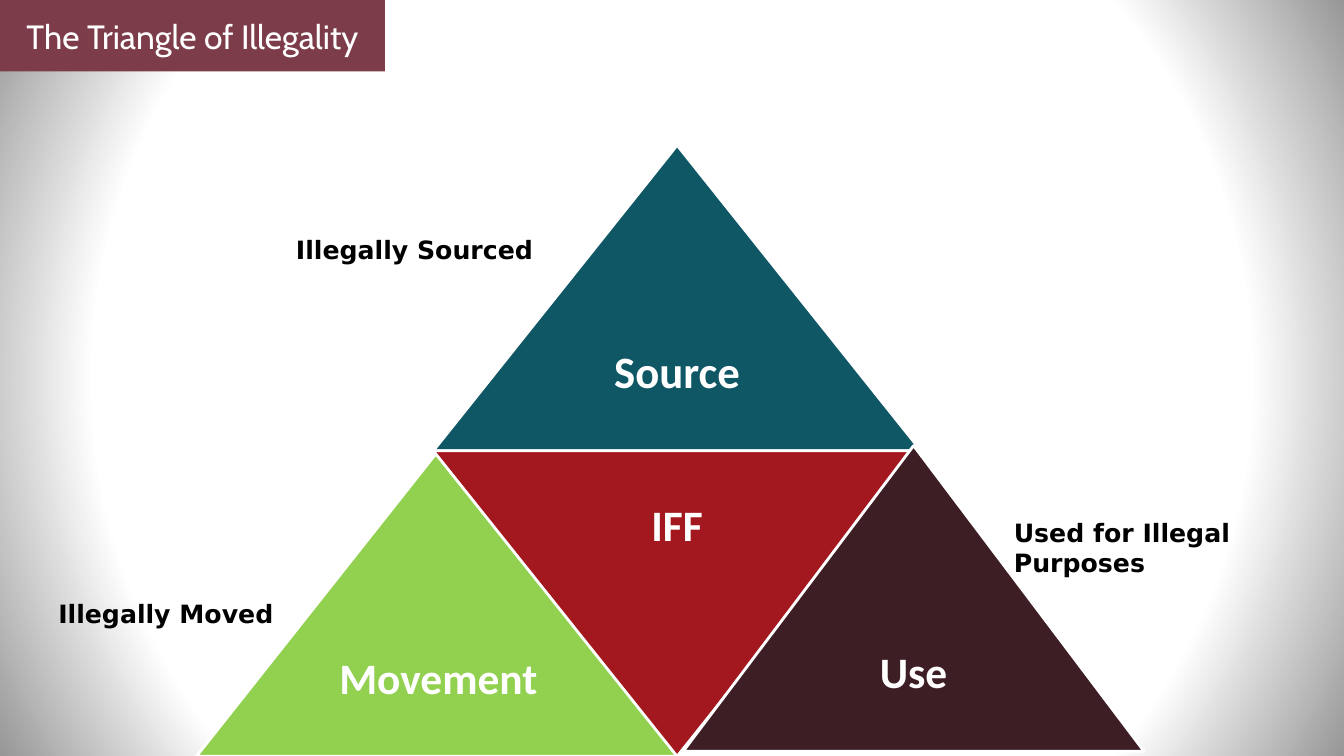
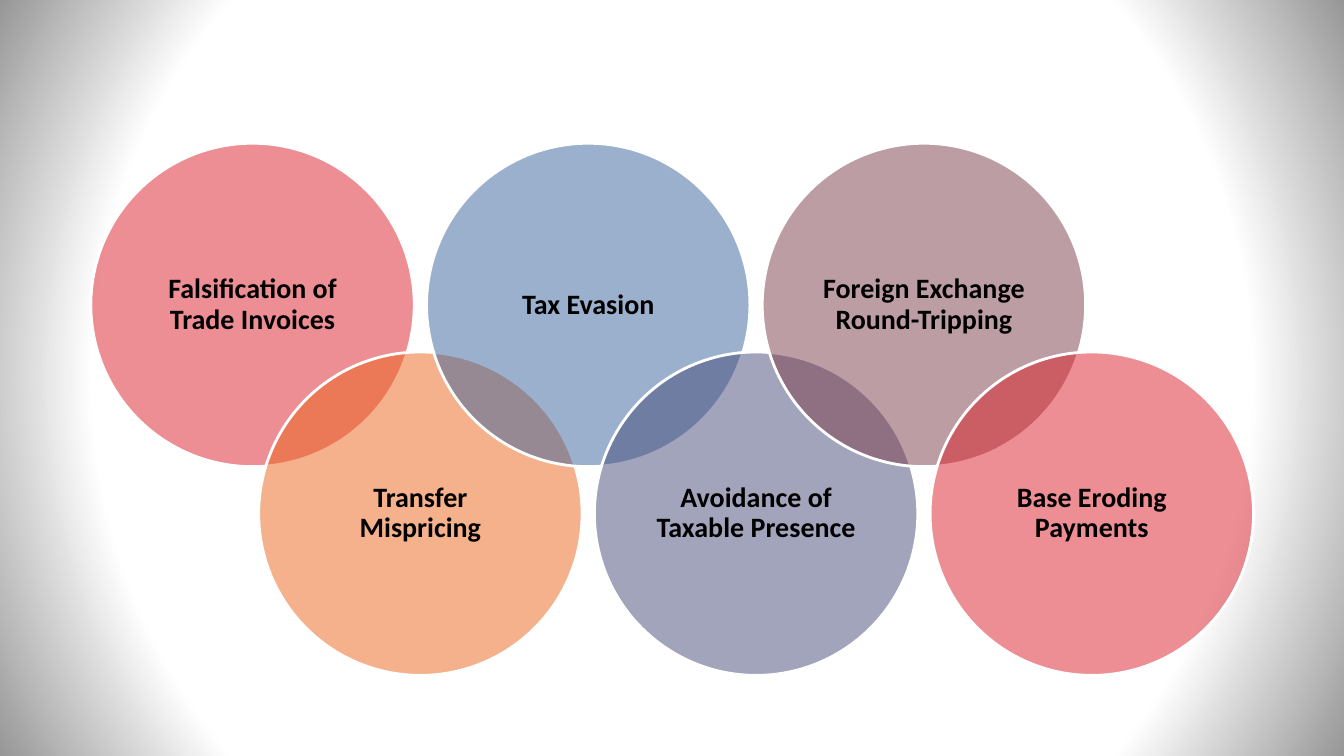
from lxml.etree import SubElement
from pptx import Presentation
from pptx.dml.color import RGBColor
from pptx.enum.shapes import MSO_SHAPE as SHAPE
from pptx.enum.text import MSO_ANCHOR as ANCHOR, PP_ALIGN as ALIGN
from pptx.oxml.ns import qn
from pptx.util import Cm, Pt

WHITE = RGBColor(0xFF, 0xFF, 0xFF)
BLACK = RGBColor(0x00, 0x00, 0x00)
GREY = RGBColor(0x97, 0x97, 0x97)
MAROON = RGBColor(0x7D, 0x3C, 0x4A)
TEAL = RGBColor(0x10, 0x57, 0x66)
GREEN = RGBColor(0x92, 0xD0, 0x50)
CRIMSON = RGBColor(0xA3, 0x17, 0x1E)
PLUM = RGBColor(0x3E, 0x1E, 0x25)
RED = RGBColor(0xDA, 0x1F, 0x28)
ORANGE = RGBColor(0xEB, 0x64, 0x1B)
BLUE = RGBColor(0x39, 0x63, 0x9D)
INDIGO = RGBColor(0x47, 0x4B, 0x78)

TITLE_FONT, BODY_FONT, LABEL_FONT = "Cabin", "Calibri", "DejaVu Sans"


def set_background(master):
    """Give every slide the white centre that fades to grey corners."""
    fill = master.background.fill
    fill.gradient()
    for stop, position, color in zip(fill.gradient_stops, (0.75, 1), (WHITE, GREY)):
        stop.position = position
        stop.color.rgb = color
    grad = next(master.element.iter(qn("a:gradFill")))
    grad.remove(grad.find(qn("a:lin")))
    circle = SubElement(grad, qn("a:path"), path="circle")
    SubElement(circle, qn("a:fillToRect"), l="50000", t="50000", r="50000", b="50000")


def write(sp, text, font, size, color, bold=True, align=ALIGN.CENTER):
    """Write one wrapped paragraph into a shape."""
    tf = sp.text_frame
    tf.word_wrap = True
    p = tf.paragraphs[0]
    p.text = text
    p.alignment = align
    p.font.name, p.font.size, p.font.bold = font, Pt(size), bold
    p.font.color.rgb = color
    return p


def add_title(slide, text, width=9.7, height=1.8):
    """Add the title band in the top left corner."""
    sp = slide.shapes.add_shape(SHAPE.RECTANGLE, 0, 0, Cm(width), Cm(height))
    sp.shadow.inherit = False
    sp.fill.solid()
    sp.fill.fore_color.rgb = MAROON
    sp.line.fill.background()
    write(sp, text, TITLE_FONT, 24, WHITE, bold=False)


def add_part(slide, kind, box, fill, text, size, color, inset):
    """Add a white-edged diagram part with its caption inside."""
    sp = slide.shapes.add_shape(kind, *map(Cm, box))
    sp.shadow.inherit = False
    sp.fill.solid()
    sp.fill.fore_color.rgb = fill
    sp.line.color.rgb = WHITE
    sp.line.width = Pt(2)
    p = write(sp, text, BODY_FONT, size, color)
    p.line_spacing = 0.9
    tf = sp.text_frame
    tf.vertical_anchor = ANCHOR.MIDDLE
    tf.margin_left = tf.margin_top = tf.margin_right = tf.margin_bottom = Cm(inset)
    return sp


def add_label(slide, left, top, width, height, text):
    """Add a bold note beside the pyramid."""
    sp = slide.shapes.add_textbox(Cm(left), Cm(top), Cm(width), Cm(height))
    write(sp, text, LABEL_FONT, 18, BLACK, align=ALIGN.LEFT)


def add_pyramid(slide, left, top, height=7.7):
    """Build the pyramid of four triangles and the notes around it."""
    up, down = SHAPE.ISOSCELES_TRIANGLE, SHAPE.FLOWCHART_MERGE
    triangles = [
        (up, 5.97, 0, 12.29, TEAL, "Source", 32),
        (up, 0, height, 12.19, GREEN, "Movement", 31),
        (down, 5.97, height, 12.29, CRIMSON, "IFF", 31),
        (up, 12.27, height - 0.13, 11.61, PLUM, "Use", 31),
    ]
    for kind, x, y, width, fill, text, size in triangles:
        box = (left + x, top + y, width, height)
        add_part(slide, kind, box, fill, text, size, WHITE, 0.33)
    labels = [
        (2.26, 2.13, 7.01, 1.02, "Illegally Sourced"),
        (-3.73, 11.3, 6.25, 1.02, "Illegally Moved"),
        (20.35, 9.24, 7.59, 1.8, "Used for Illegal Purposes"),
    ]
    for x, y, width, label_height, text in labels:
        add_label(slide, left + x, top + y, width, label_height, text)


def add_circle_chain(slide, left, top, circles, size=8.15, step=4.23, drop=5.26):
    """Chain translucent circles that alternate between two rows."""
    for i, (fill, text) in enumerate(circles):
        box = (left + i * step, top + i % 2 * drop, size, size)
        sp = add_part(slide, SHAPE.OVAL, box, fill, text, 20, BLACK, 0.2)
        color = sp.element.spPr.find(qn("a:solidFill"))[0]
        SubElement(color, qn("a:alpha"), val="50000")


def main():
    """Build and save the presentation."""
    prs = Presentation()
    prs.slide_width, prs.slide_height = Cm(33.87), Cm(19.05)
    set_background(prs.slide_master)
    blank = prs.slide_layouts[6]

    s = prs.slides.add_slide(blank)
    add_title(s, "The Triangle of Illegality")
    add_pyramid(s, 4.95, 3.66)

    s = prs.slides.add_slide(blank)
    add_circle_chain(s, 2.29, 3.61, [
        (RED, "Falsification of Trade Invoices"),
        (ORANGE, "Transfer Mispricing"),
        (BLUE, "Tax Evasion"),
        (INDIGO, "Avoidance of Taxable Presence"),
        (MAROON, "Foreign Exchange Round-Tripping"),
        (RED, "Base Eroding Payments"),
    ])
    prs.save("out.pptx")


if __name__ == "__main__":
    main()
